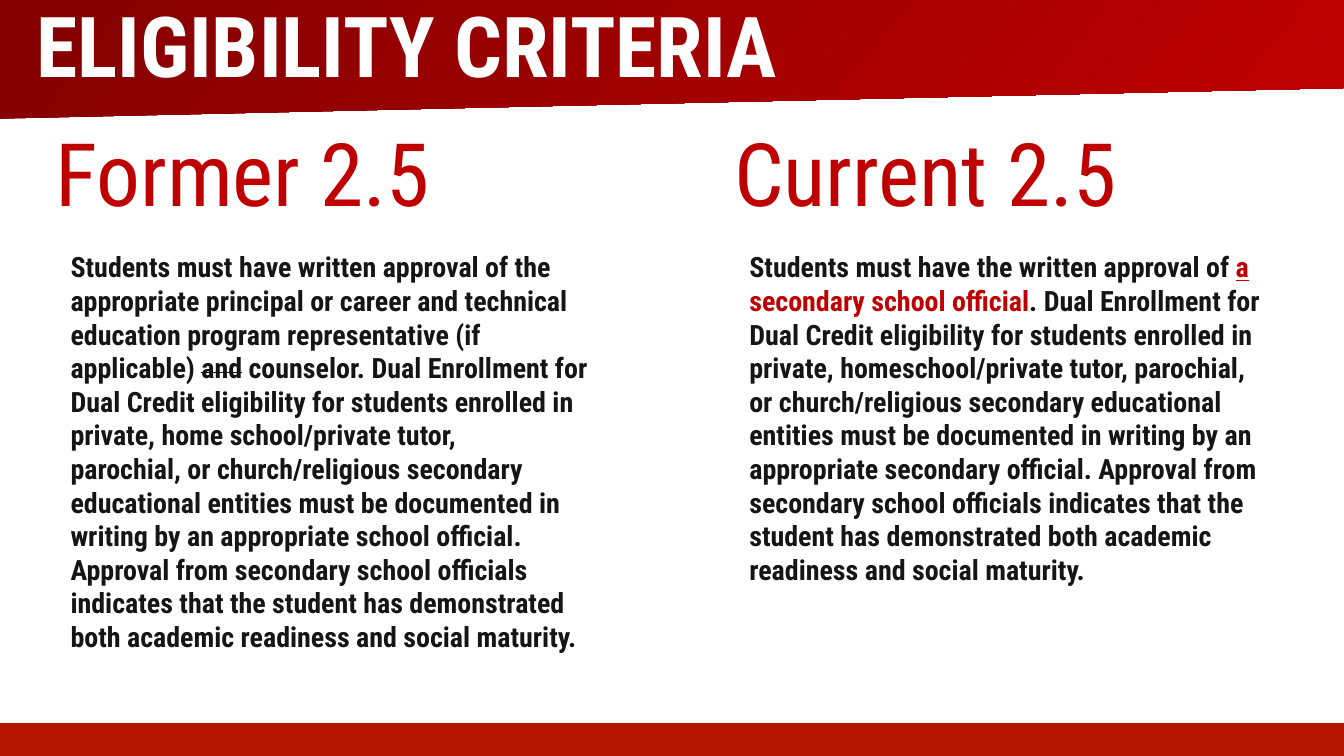
from dataclasses import dataclass

from pptx import Presentation
from pptx.dml.color import RGBColor
from pptx.enum.shapes import MSO_SHAPE
from pptx.enum.text import MSO_ANCHOR
from pptx.util import Inches, Pt

FONT = "Roboto Condensed"
WHITE = RGBColor(0xFF, 0xFF, 0xFF)
INK = RGBColor(0x15, 0x15, 0x15)
RED = RGBColor(0xBF, 0x00, 0x00)
FOOTER_RED = RGBColor(0xB4, 0x16, 0x00)
BAND_DARK = RGBColor(0x7F, 0x00, 0x00)
BAND_BRIGHT = RGBColor(0xC0, 0x00, 0x00)


@dataclass(frozen=True)
class Span:
    text: str
    color: RGBColor = INK
    bold: bool = True
    underline: bool = False
    strike: bool = False


@dataclass(frozen=True)
class Column:
    left: float
    heading: str
    paragraphs: list[list[Span]]


COLUMNS = [
    Column(1.04, "Former 2.5", [
        [Span("Students must have written approval of the appropriate principal "
              "or career and technical")],
        [Span("education program representative (if applicable) "),
         Span("and", strike=True),
         Span(" counselor. Dual Enrollment for Dual Credit eligibility for students "
              "enrolled in private, home school/private tutor,")],
        [Span("parochial, or church/religious secondary educational entities must be "
              "documented in")],
        [Span("writing by an appropriate school official. Approval from secondary "
              "school officials")],
        [Span("indicates that the student has demonstrated both academic readiness "
              "and social maturity.")],
    ]),
    Column(14.51, "Current 2.5", [
        [Span("Students must have the written approval of "),
         Span("a", RED, underline=True),
         Span(" secondary school official", RED),
         Span(". Dual Enrollment for Dual Credit eligibility for students enrolled in "
              "private, homeschool/private tutor, parochial, or church/religious "
              "secondary educational")],
        [Span("entities must be documented in writing by an appropriate secondary "
              "official. Approval from secondary school officials indicates that the "
              "student has demonstrated both academic readiness and social maturity.")],
    ]),
]


def add_block(page, left: float, top: float, width: float, height: float,
              color: RGBColor) -> None:
    block = page.shapes.add_shape(MSO_SHAPE.RECTANGLE, Inches(left), Inches(top),
                                  Inches(width), Inches(height))
    block.shadow.inherit = False
    block.fill.solid()
    block.fill.fore_color.rgb = color
    block.line.fill.background()


def add_band(page) -> None:
    """Slanted gradient band behind the title."""
    left, right, top = -1.17, 27.83, -1.22
    points = [(right, 1.72), (left, 2.38), (left, -0.08), (right, -0.08),
              (right, top)]
    builder = page.shapes.build_freeform(Inches(right), Inches(1.65))
    builder.add_line_segments([(Inches(x), Inches(y)) for x, y in points])
    band = builder.convert_to_shape()
    band.shadow.inherit = False
    band.line.fill.background()
    band.fill.gradient()
    band.fill.gradient_angle = 320
    for stop, position, color in zip(band.fill.gradient_stops, (0, 1),
                                     (BAND_DARK, BAND_BRIGHT)):
        stop.position = position
        stop.color.rgb = color


def add_text(page, left: float, top: float, width: float, height: float,
             size: float, paragraphs: list[list[Span]],
             anchor: MSO_ANCHOR = MSO_ANCHOR.TOP,
             insets: tuple[float, float] = (0.06, 0.06)) -> None:
    box = page.shapes.add_textbox(Inches(left), Inches(top), Inches(width),
                                  Inches(height))
    frame = box.text_frame
    frame.word_wrap = True
    frame.vertical_anchor = anchor
    frame.margin_left = frame.margin_right = Inches(insets[0])
    frame.margin_top = frame.margin_bottom = Inches(insets[1])
    for index, spans in enumerate(paragraphs):
        para = frame.add_paragraph() if index else frame.paragraphs[0]
        for span in spans:
            run = para.add_run()
            run.text = span.text
            run.font.name = FONT
            run.font.size = Pt(size)
            run.font.bold = span.bold
            run.font.color.rgb = span.color
            if span.underline:
                run.font.underline = True
            if span.strike:
                run.font._element.set("strike", "sngStrike")


def add_column(page, column: Column) -> None:
    add_block(page, column.left, 4.61, 11.12, 9.05, WHITE)
    add_text(page, column.left, 2.29, 9, 2.22, 125,
             [[Span(column.heading, RED, bold=False)]], MSO_ANCHOR.MIDDLE)
    add_text(page, column.left + 0.3, 4.9, 10.52, 8.46, 40, column.paragraphs)


def main() -> None:
    deck = Presentation()
    deck.slide_width, deck.slide_height = Inches(26.67), Inches(15)
    page = deck.slides.add_slide(deck.slide_layouts[6])

    # Footer bar and title band
    add_block(page, -0.03, 14.35, 26.72, 0.65, FOOTER_RED)
    add_band(page)
    add_text(page, 0.62, -0.17, 23, 1.67, 120,
             [[Span("ELIGIBILITY CRITERIA", WHITE)]], insets=(0.1, 0.05))

    # Former and current wording side by side
    for column in COLUMNS:
        add_column(page, column)

    deck.save("out.pptx")


if __name__ == "__main__":
    main()
